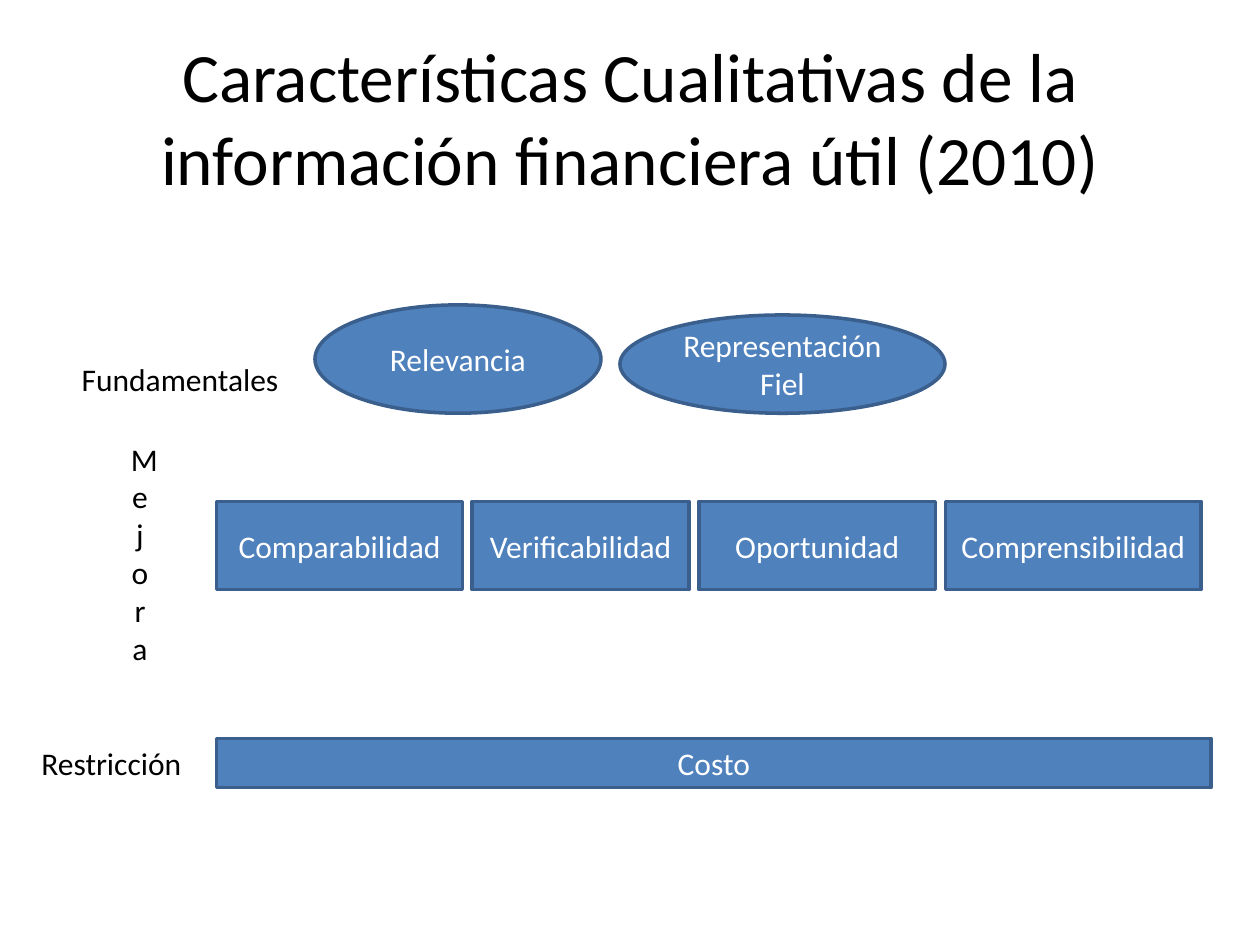
"""Build a slide on the qualitative characteristics of useful financial information."""
from dataclasses import dataclass

from pptx import Presentation
from pptx.dml.color import RGBColor
from pptx.enum.shapes import MSO_SHAPE
from pptx.enum.text import MSO_ANCHOR, PP_ALIGN
from pptx.util import Inches, Pt

RECT, OVAL = MSO_SHAPE.RECTANGLE, MSO_SHAPE.OVAL
MIDDLE, TOP = MSO_ANCHOR.MIDDLE, MSO_ANCHOR.TOP
CENTER, LEFT = PP_ALIGN.CENTER, PP_ALIGN.LEFT

BLACK = RGBColor(0x00, 0x00, 0x00)
WHITE = RGBColor(0xFF, 0xFF, 0xFF)
BLUE = RGBColor(0x4F, 0x81, 0xBD)
DARK_BLUE = RGBColor(0x3A, 0x5F, 0x8C)

FONT = "Calibri"
COLS, ROWS = 100, 75
SLIDE_W, SLIDE_H = Inches(10), Inches(7.5)
BODY_LEFT, GAP = 17.2, 0.78
ENHANCING_ROW, CONSTRAINT_ROW = 39.8, 58.6


@dataclass(frozen=True)
class Box:
    """A text with its place in grid columns and rows."""
    text: str
    col: float
    row: float
    cols: float
    rows: float

    def place(self) -> tuple[int, int, int, int]:
        """Return left, top, width and height as slide lengths."""
        x, y = SLIDE_W / COLS, SLIDE_H / ROWS
        return int(self.col * x), int(self.row * y), int(self.cols * x), int(self.rows * y)


TITLE = Box("Características Cualitativas de la información financiera útil (2010)", 5, 3, 90, 12.5)
FUNDAMENTAL = (
    Box("Relevancia", 25, 24.2, 22.7, 8.6),
    Box("Representación Fiel", 49.2, 25, 25.8, 7.8),
)
ENHANCING = (
    ("Comparabilidad", 19.5),
    ("Verificabilidad", 17.2),
    ("Oportunidad", 18.8),
    ("Comprensibilidad", 20.3),
)
COST = Box("Costo", BODY_LEFT, CONSTRAINT_ROW, 78.9, 3.9)
SIDE_LABELS = (
    Box("Fundamentales", 5.5, 28.1, 17.8, 4),
    Box("Restricción", 2.3, CONSTRAINT_ROW, 13.2, 4),
)
STACKED_LABEL = Box("Mejora", 9.4, 34.4, 3.4, 19.2)


def write(s, text: str, size: float, color: RGBColor, align=CENTER, anchor=MIDDLE, wrap: bool = True) -> None:
    """Set the text of a shape and its format."""
    tf = s.text_frame
    tf.word_wrap = wrap
    tf.vertical_anchor = anchor
    p = tf.paragraphs[0]
    p.text = text
    p.alignment = align
    p.font.name, p.font.size = FONT, Pt(size)
    p.font.color.rgb = color


def add_block(slide, kind: MSO_SHAPE, box: Box) -> None:
    """Draw a blue shape with white text."""
    s = slide.shapes.add_shape(kind, *box.place())
    s.shadow.inherit = False
    s.fill.solid()
    s.fill.fore_color.rgb = BLUE
    s.line.color.rgb = DARK_BLUE
    s.line.width = Pt(2)
    write(s, box.text, 18, WHITE)


def add_label(slide, box: Box, align=LEFT, wrap: bool = False) -> None:
    """Draw a plain black label."""
    s = slide.shapes.add_textbox(*box.place())
    write(s, box.text, 18, BLACK, align, TOP, wrap)


def main() -> None:
    """Build and save the slide."""
    prs = Presentation()
    prs.slide_width, prs.slide_height = SLIDE_W, SLIDE_H
    slide = prs.slides.add_slide(prs.slide_layouts[5])

    title = slide.shapes.title
    title.left, title.top, title.width, title.height = TITLE.place()
    write(title, TITLE.text, 39.6, BLACK)

    for box in FUNDAMENTAL:
        add_block(slide, OVAL, box)
    col = BODY_LEFT
    for text, cols in ENHANCING:
        add_block(slide, RECT, Box(text, col, ENHANCING_ROW, cols, 7))
        col += cols + GAP
    add_block(slide, RECT, COST)

    for box in SIDE_LABELS:
        add_label(slide, box)
    add_label(slide, STACKED_LABEL, CENTER, True)

    prs.save("out.pptx")


if __name__ == "__main__":
    main()
